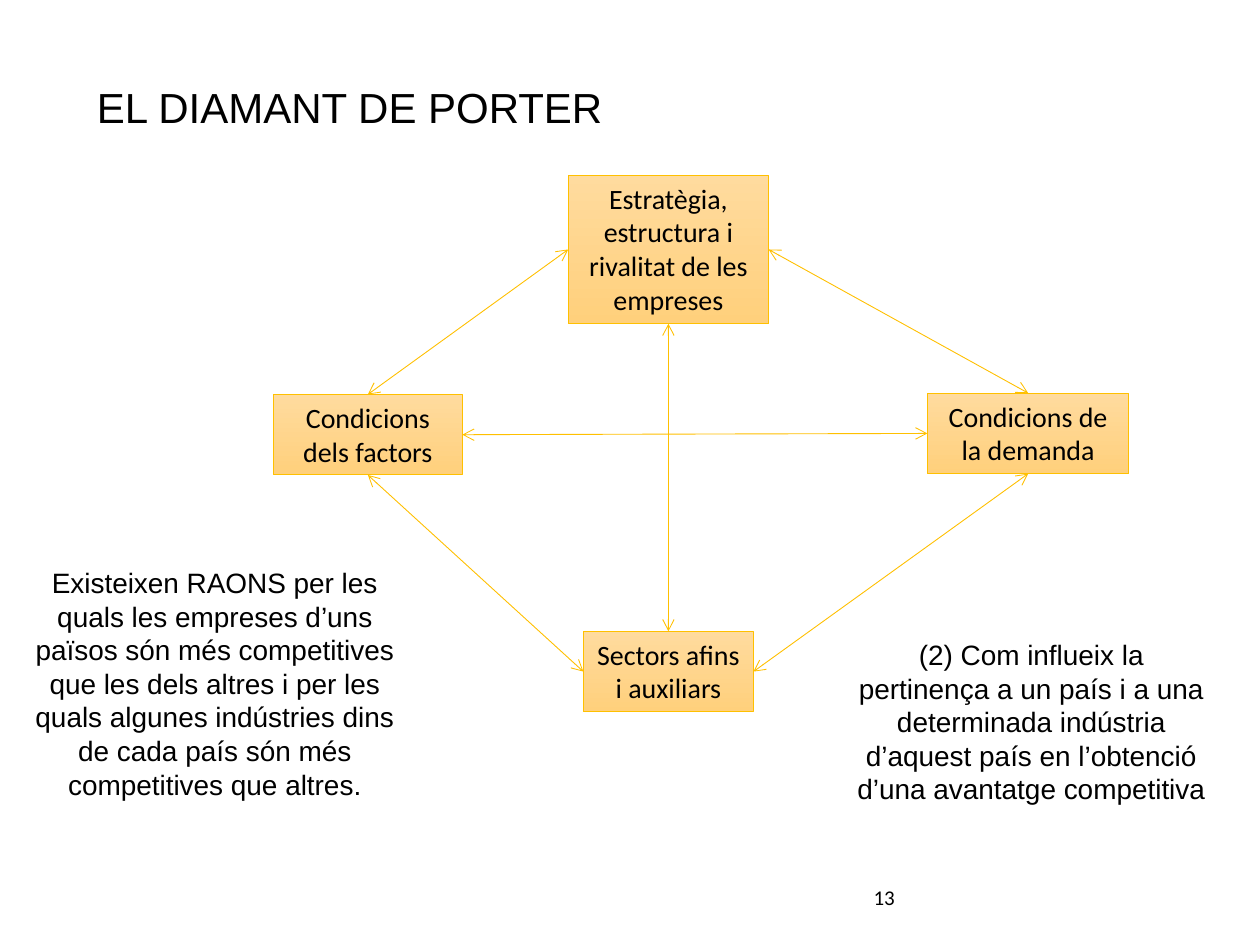
from dataclasses import dataclass

from lxml import etree
from pptx import Presentation
from pptx.dml.color import RGBColor
from pptx.enum.shapes import MSO_CONNECTOR, MSO_SHAPE
from pptx.enum.text import MSO_ANCHOR, PP_ALIGN
from pptx.oxml.ns import qn
from pptx.util import Inches, Pt

RECT = MSO_SHAPE.RECTANGLE
STRAIGHT = MSO_CONNECTOR.STRAIGHT
TOP_ANCHOR = MSO_ANCHOR.TOP
LEFT_ALIGN, CENTER, RIGHT_ALIGN = PP_ALIGN.LEFT, PP_ALIGN.CENTER, PP_ALIGN.RIGHT
TOP, LEFT, BOTTOM, RIGHT = range(4)  # connection sites of a rectangle

BLACK, GOLD = "000000", "FFC000"
GRADIENT = ("FFDB9E", "FFD07C")
LINE_WIDTH = Pt(0.5)


@dataclass
class Block:
    text: str
    left: float
    top: float
    width: float
    height: float
    font: str = "Calibri"
    size: int = 16
    align: PP_ALIGN = CENTER

    def frame(self):
        return [Inches(v) for v in (self.left, self.top, self.width, self.height)]


@dataclass
class Link:
    start: str
    start_site: int
    end: str
    end_site: int


NOTES = [
    Block("13", 5.03, 6.97, 2.17, 0.52, size=12, align=RIGHT_ALIGN),
    Block("EL DIAMANT DE PORTER", 0.67, 0.6, 8.35, 0.51, "Arial", 24, LEFT_ALIGN),
    Block("Existeixen RAONS per les quals les empreses d’uns països són més "
          "competitives que les dels altres i per les quals algunes indústries "
          "dins de cada país són més competitives que altres.",
          0.12, 4.44, 3.17, 1.99, "Arial"),
    Block("(2) Com influeix la pertinença a un país i a una determinada "
          "indústria d’aquest país en l’obtenció d’una avantatge competitiva",
          6.65, 5.01, 3.07, 1.45, "Arial"),
]

FORCES = {
    "strategy": Block("Estratègia, estructura i rivalitat de les empreses",
                      4.51, 1.39, 1.59, 1.18),
    "factors": Block("Condicions dels factors", 2.17, 3.13, 1.5, 0.64),
    "sectors": Block("Sectors afins i auxiliars", 4.63, 5.01, 1.35, 0.64),
    "demand": Block("Condicions de la demanda", 7.36, 3.12, 1.6, 0.64),
}

LINKS = [
    Link("factors", TOP, "strategy", LEFT),
    Link("factors", BOTTOM, "sectors", LEFT),
    Link("sectors", RIGHT, "demand", BOTTOM),
    Link("strategy", RIGHT, "demand", TOP),
    Link("strategy", BOTTOM, "sectors", TOP),
    Link("factors", RIGHT, "demand", LEFT),
]


def rgb(value: str) -> RGBColor:
    return RGBColor.from_string(value)


def write_text(sp, block: Block) -> None:
    tf = sp.text_frame
    tf.word_wrap = True
    tf.vertical_anchor = TOP_ANCHOR
    tf.text = block.text
    p = tf.paragraphs[0]
    p.alignment = block.align
    font = p.runs[0].font
    font.name, font.size = block.font, Pt(block.size)
    font.color.rgb = rgb(BLACK)


def add_force(slide, block: Block):
    sp = slide.shapes.add_shape(RECT, *block.frame())
    sp.shadow.inherit = False
    sp.fill.gradient()
    sp.fill.gradient_angle = 270
    for stop, colour in zip(sp.fill.gradient_stops, GRADIENT):
        stop.color.rgb = rgb(colour)
    sp.line.color.rgb = rgb(GOLD)
    sp.line.width = LINE_WIDTH
    write_text(sp, block)
    return sp


def add_link(slide, link: Link, boxes: dict) -> None:
    """Join two boxes with a line that has an arrowhead at both ends."""
    line = slide.shapes.add_connector(STRAIGHT, 0, 0, 0, 0)
    line.begin_connect(boxes[link.start], link.start_site)
    line.end_connect(boxes[link.end], link.end_site)
    line.line.color.rgb = rgb(GOLD)
    line.line.width = LINE_WIDTH
    sp_pr = line._element.spPr
    for tag in ("a:headEnd", "a:tailEnd"):
        etree.SubElement(sp_pr.find(qn("a:ln")), qn(tag), type="arrow")
    etree.SubElement(sp_pr, qn("a:effectLst"))


def main() -> None:
    prs = Presentation()
    prs.slide_width, prs.slide_height = Inches(10), Inches(7.5)
    slide = prs.slides.add_slide(prs.slide_layouts[6])
    for note in NOTES:
        write_text(slide.shapes.add_textbox(*note.frame()), note)
    boxes = {name: add_force(slide, block) for name, block in FORCES.items()}
    for link in LINKS:
        add_link(slide, link, boxes)
    prs.save("out.pptx")


if __name__ == "__main__":
    main()
